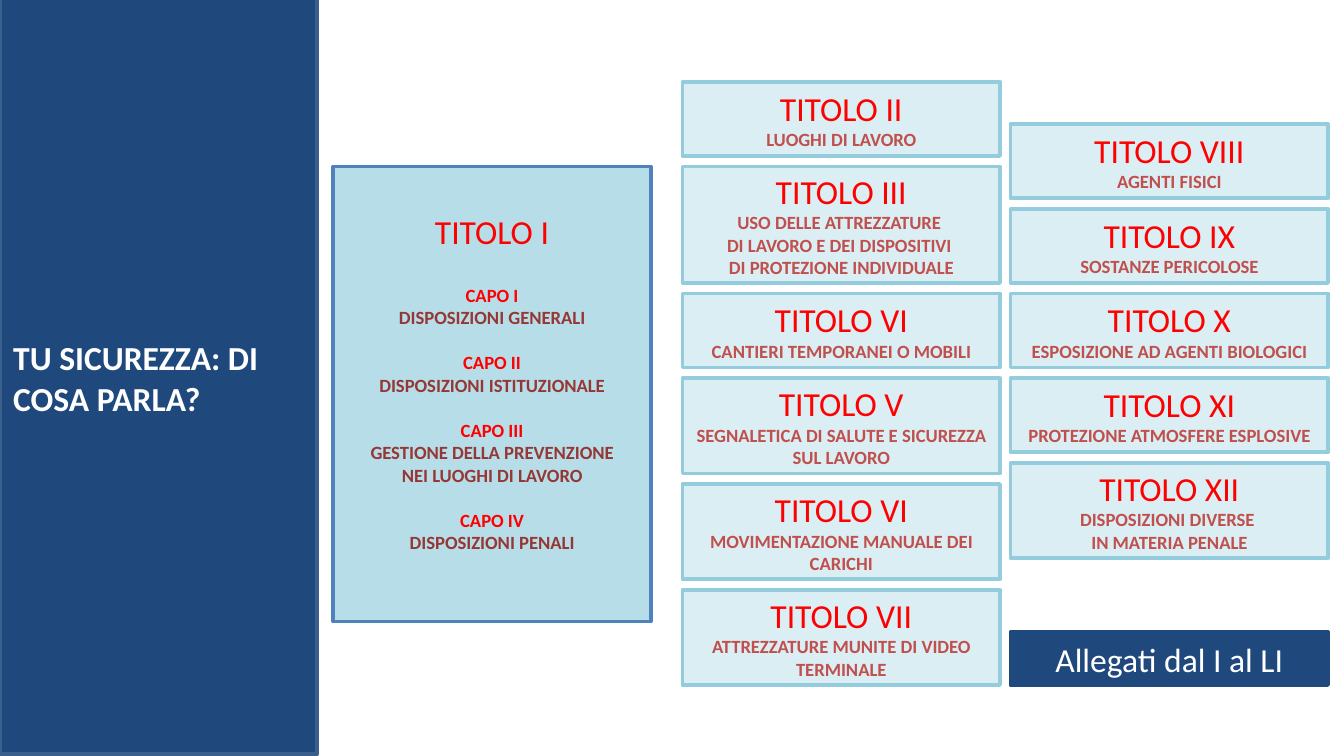
from pptx import Presentation
from pptx.dml.color import RGBColor
from pptx.enum.shapes import MSO_SHAPE
from pptx.enum.text import MSO_ANCHOR, MSO_AUTO_SIZE, PP_ALIGN
from pptx.util import Cm, Pt

NAVY, RED, WHITE = "1F497D", "FF0000", "FFFFFF"
MAROON, BRICK = "953735", "C0504D"
FONT = "Calibri"
BIG, SMALL = 18, 10

HEADING = "TU SICUREZZA: DI COSA PARLA?"
ANNEXES = "Allegati dal I al LI"
CHAPTERS = [
    ("CAPO I", ["DISPOSIZIONI GENERALI"]),
    ("CAPO II", ["DISPOSIZIONI ISTITUZIONALE"]),
    ("CAPO III", ["GESTIONE DELLA PREVENZIONE", "NEI LUOGHI DI LAVORO"]),
    ("CAPO IV", ["DISPOSIZIONI PENALI"]),
]
# Each column: left, top, then (title, subject lines, box height), in cm
COLUMNS = [
    (12.9, 1.55, [
        ("TITOLO II", ["LUOGHI DI LAVORO"], 1.4),
        ("TITOLO III", ["USO DELLE ATTREZZATURE ", "DI LAVORO E DEI DISPOSITIVI ",
                        "DI PROTEZIONE INDIVIDUALE"], 2.2),
        ("TITOLO VI", ["CANTIERI TEMPORANEI O MOBILI"], 1.4),
        ("TITOLO V", ["SEGNALETICA DI SALUTE E SICUREZZA SUL LAVORO"], 1.8),
        ("TITOLO VI", ["MOVIMENTAZIONE MANUALE DEI CARICHI"], 1.8),
        ("TITOLO VII", ["ATTREZZATURE MUNITE DI VIDEO TERMINALE"], 1.8),
    ]),
    (19.1, 2.35, [
        ("TITOLO VIII", ["AGENTI FISICI"], 1.4),
        ("TITOLO IX", ["SOSTANZE PERICOLOSE"], 1.4),
        ("TITOLO X", ["ESPOSIZIONE AD AGENTI BIOLOGICI"], 1.4),
        ("TITOLO XI", ["PROTEZIONE ATMOSFERE ESPLOSIVE"], 1.4),
        ("TITOLO XII", ["DISPOSIZIONI DIVERSE ", "IN MATERIA PENALE"], 1.8),
    ]),
]
BOX_WIDTH, GAP = 6, 0.2


def color(hex_text):
    return RGBColor.from_string(hex_text)


def write(frame, lines, align):
    """Fill the frame from (text, size, colour, bold, space before) lines."""
    frame.word_wrap = True
    frame.text = "\n".join(line[0] for line in lines)
    for para, (_, size, ink, bold, before) in zip(frame.paragraphs, lines):
        para.alignment = align
        para.space_before = Pt(before)
        font = para.runs[0].font
        font.name, font.size, font.bold = FONT, Pt(size), bold
        font.color.rgb = color(ink)


def add_box(page, left, top, height, fill, outline, lines=()):
    box = page.shapes.add_shape(MSO_SHAPE.RECTANGLE, Cm(left), Cm(top),
                                Cm(BOX_WIDTH), Cm(height))
    box.shadow.inherit = False
    box.fill.solid()
    box.fill.fore_color.rgb = color(fill)
    box.line.color.rgb = color(outline)
    box.line.width = Pt(2)
    if lines:
        box.text_frame.vertical_anchor = MSO_ANCHOR.MIDDLE
        write(box.text_frame, lines, PP_ALIGN.CENTER)
    return box


deck = Presentation()
deck.slide_width, deck.slide_height = Cm(25.4), Cm(14.29)
page = deck.slides.add_slide(deck.slide_layouts[6])

add_box(page, 0, -0.04, 14.29, NAVY, "3A5F8C")
heading = page.shapes.add_textbox(Cm(0), Cm(6.25), Cm(BOX_WIDTH), Cm(1.8))
write(heading.text_frame, [(HEADING, BIG, WHITE, True, 0)], PP_ALIGN.LEFT)
heading.text_frame.auto_size = MSO_AUTO_SIZE.SHAPE_TO_FIT_TEXT

lines = [("TITOLO I", BIG, RED, False, 0)]
for index, (chapter, subjects) in enumerate(CHAPTERS):
    lines.append((chapter, SMALL, RED, True, 12.2 if index else 17.1))
    lines += [(subject, SMALL, MAROON, True, 0) for subject in subjects]
first_title = add_box(page, 6.3, 3.15, 8.6, "B7DEE8", "4F81BD", lines)
first_title.text_frame.margin_bottom = Cm(0.56)

for left, top, titles in COLUMNS:
    for title, subjects, height in titles:
        lines = [(title, BIG, RED, False, 0)]
        lines += [(subject, SMALL, BRICK, True, 0) for subject in subjects]
        add_box(page, left, top, height, "DBEEF4", "93CDDD", lines)
        top += height + GAP

add_box(page, 19.1, 11.95, 1, NAVY, NAVY, [(ANNEXES, BIG, WHITE, False, 0)])

deck.save("out.pptx")
